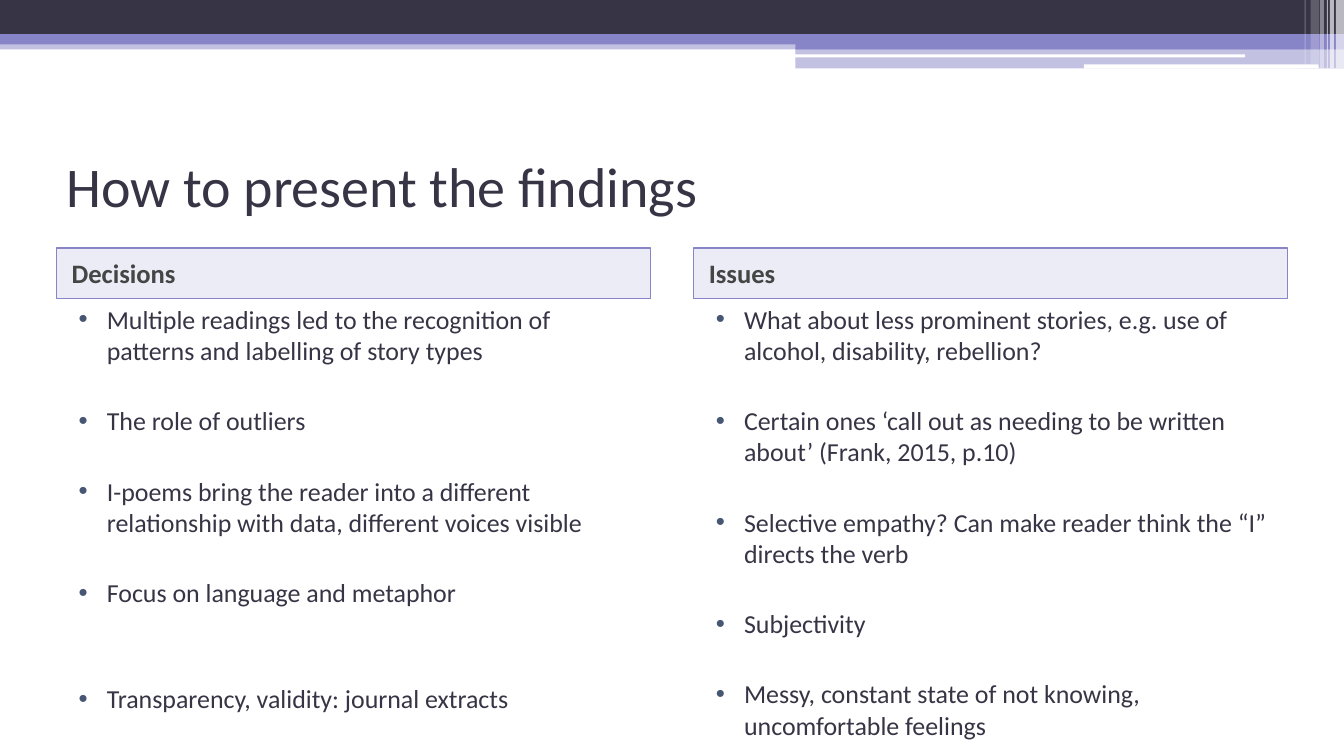
from dataclasses import dataclass

from lxml.etree import SubElement
from pptx import Presentation
from pptx.dml.color import RGBColor
from pptx.enum.shapes import MSO_SHAPE as Preset
from pptx.enum.text import MSO_ANCHOR as Anchor, MSO_AUTO_SIZE as AutoSize, PP_ALIGN as Align
from pptx.oxml.ns import qn
from pptx.util import Inches, Pt


@dataclass(frozen=True)
class Theme:
    font: str = "Calibri"
    dark: str = "373545"
    violet: str = "8784C7"
    pale: str = "B7B5DD"
    white: str = "FFFFFF"
    heading: str = "454545"
    bullet: str = "465673"
    title_size: float = 40
    heading_size: float = 19
    body_size: float = 18.5


THEME = Theme()
TITLE = "How to present the findings"

# Each point is its text and the space before it in points
GAP, WIDE_GAP = 28, 53.5
COLUMNS = [
    ("Decisions", [
        ("Multiple readings led to the recognition of patterns and labelling of story types", 3),
        ("The role of outliers", GAP),
        ("I-poems bring the reader into a different relationship with data, "
         "different voices visible", GAP),
        ("Focus on language and metaphor", GAP),
        ("Transparency, validity: journal extracts", WIDE_GAP),
    ]),
    ("Issues", [
        ("What about less prominent stories, e.g. use of alcohol, disability, rebellion?", 3),
        ("Certain ones ‘call out as needing to be written about’ (Frank, 2015, p.10)", GAP),
        ("Selective empathy? Can make reader think the “I” directs the verb", GAP),
        ("Subjectivity", GAP),
        ("Messy, constant state of not knowing, uncomfortable feelings", GAP),
    ]),
]

# Left, top, width, height, colour, opacity in percent
BANDS = [
    (0, 0.4, 13.33, 0.09, THEME.violet, 50),
    (0, 0, 13.33, 0.34, THEME.dark, 100),
    (0, 0.34, 13.33, 0.1, THEME.violet, 100),
    (7.89, 0.39, 5.44, 0.1, THEME.violet, 100),
    (7.89, 0.48, 5.44, 0.2, THEME.violet, 50),
]
WHITE_BARS = [(7.88, 0.54, 4.47, 0.03), (10.75, 0.64, 2.33, 0.04)]
# Left, width, height, opacity in percent
STRIPES = [
    (13.25, 0.08, 0.68, 65),
    (13.19, 0.04, 0.68, 65),
    (13.16, 0.01, 0.68, 60),
    (13.09, 0.04, 0.68, 40),
    (13, 0.08, 0.64, 20),
    (12.94, 0.01, 0.64, 30),
]

LEFT, COLUMN_PITCH, COLUMN_WIDTH = 0.56, 6.32, 5.89
HEADING_TOP, HEADING_HEIGHT, POINTS_HEIGHT = 2.46, 0.5, 4.25


def fill_shape(shape, color, opacity=100):
    shape.fill.solid()
    shape.fill.fore_color.rgb = RGBColor.from_string(color)
    if opacity < 100:
        srgb = shape.fill._xPr.find(qn("a:solidFill")).find(qn("a:srgbClr"))
        SubElement(srgb, qn("a:alpha")).set("val", str(opacity * 1000))


def add_bar(slide, box, color, opacity=100, preset=Preset.RECTANGLE):
    bar = slide.shapes.add_shape(preset, *map(Inches, box))
    bar.shadow.inherit = False
    bar.line.fill.background()
    fill_shape(bar, color, opacity)


def place(holder, box, anchor):
    holder.left, holder.top, holder.width, holder.height = map(Inches, box)
    frame = holder.text_frame
    frame.word_wrap = True
    frame.auto_size = AutoSize.NONE
    frame.vertical_anchor = anchor
    return frame


def write(paragraph, text, *, size, color=THEME.dark, bold=False,
          before=0, margin=0, indent=0, bullet=False):
    run = paragraph.add_run()
    run.text = text
    run.font.name = THEME.font
    run.font.size = Pt(size)
    run.font.bold = bold
    run.font.color.rgb = RGBColor.from_string(color)
    paragraph.alignment = Align.LEFT
    paragraph.space_before = Pt(before)
    props = paragraph._p.get_or_add_pPr()
    props.set("marL", str(Inches(margin)))
    props.set("indent", str(Inches(indent)))
    if bullet:
        bullet_color = SubElement(props, qn("a:buClr"))
        SubElement(bullet_color, qn("a:srgbClr")).set("val", THEME.bullet)
        SubElement(props, qn("a:buFont")).set("typeface", "Arial")
        SubElement(props, qn("a:buChar")).set("char", "•")


def add_header_art(slide):
    for *box, color, opacity in BANDS:
        add_bar(slide, box, color, opacity)
    for box in WHITE_BARS:
        add_bar(slide, box, THEME.white, preset=Preset.ROUNDED_RECTANGLE)
    for left, width, height, opacity in STRIPES:
        add_bar(slide, (left, 0, width, height), THEME.white, opacity)


def fill_column(heading_holder, points_holder, left, heading, points):
    fill_shape(heading_holder, THEME.pale, 25)
    heading_holder.line.color.rgb = RGBColor.from_string(THEME.violet)
    heading_holder.line.width = Pt(1)
    heading_box = (left, HEADING_TOP, COLUMN_WIDTH, HEADING_HEIGHT)
    frame = place(heading_holder, heading_box, Anchor.MIDDLE)
    write(frame.paragraphs[0], heading, size=THEME.heading_size,
          color=THEME.heading, bold=True, before=3, margin=0.05)

    points_box = (left, HEADING_TOP + HEADING_HEIGHT, COLUMN_WIDTH, POINTS_HEIGHT)
    frame = place(points_holder, points_box, Anchor.TOP)
    for number, (point, before) in enumerate(points):
        paragraph = frame.add_paragraph() if number else frame.paragraphs[0]
        write(paragraph, point, size=THEME.body_size, before=before,
              margin=0.4, indent=-0.28, bullet=True)


def main():
    deck = Presentation()
    deck.slide_width, deck.slide_height = Inches(13.33), Inches(7.5)
    comparison_layout = deck.slide_layouts[4]
    slide = deck.slides.add_slide(comparison_layout)
    add_header_art(slide)

    title_frame = place(slide.shapes.title, (LEFT, 1.25, 12.22, 1.17), Anchor.MIDDLE)
    write(title_frame.paragraphs[0], TITLE, size=THEME.title_size)

    holders = slide.placeholders
    for number, (heading, points) in enumerate(COLUMNS):
        first = 1 + 2 * number
        fill_column(holders[first], holders[first + 1],
                    LEFT + number * COLUMN_PITCH, heading, points)
    deck.save("out.pptx")


if __name__ == "__main__":
    main()
